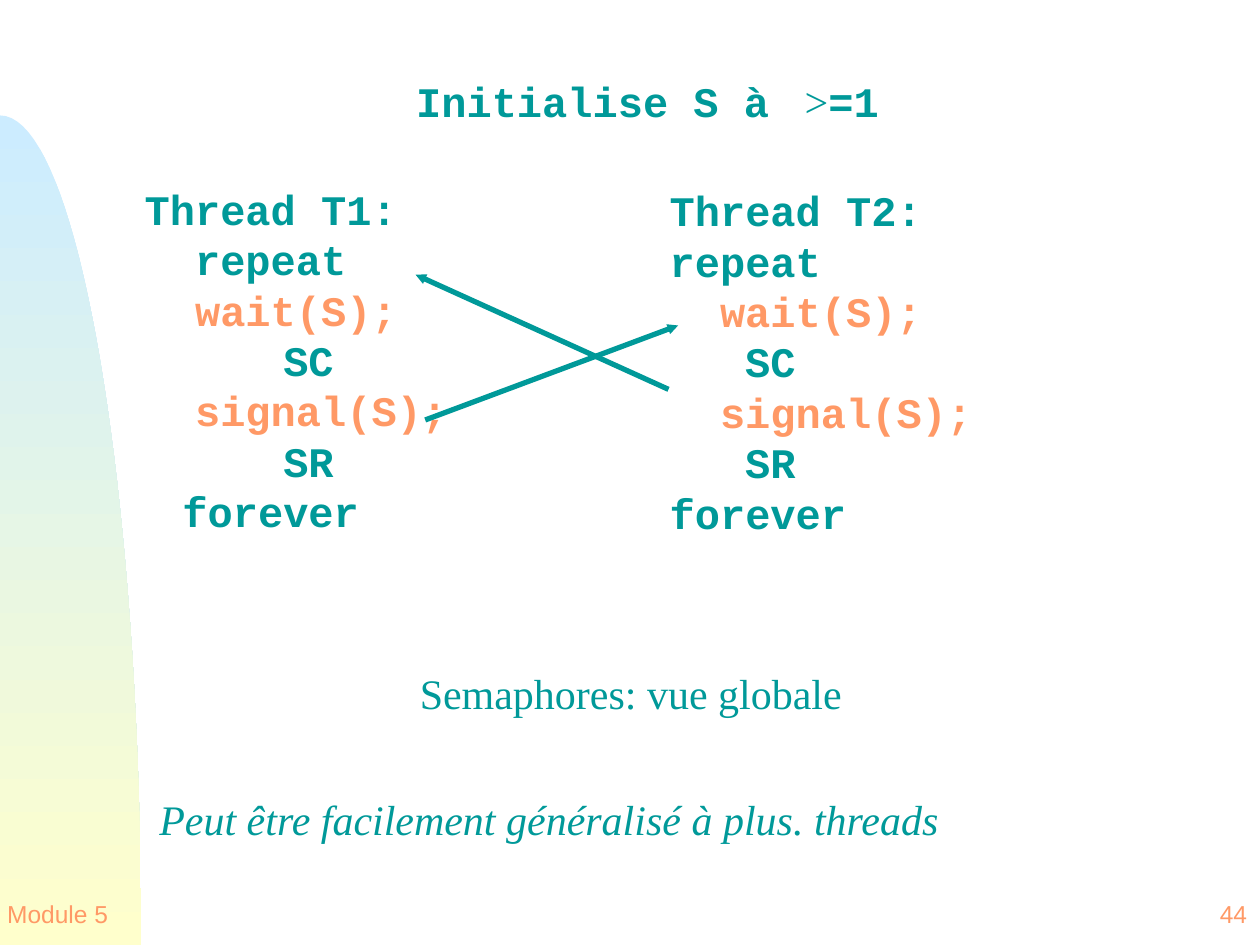
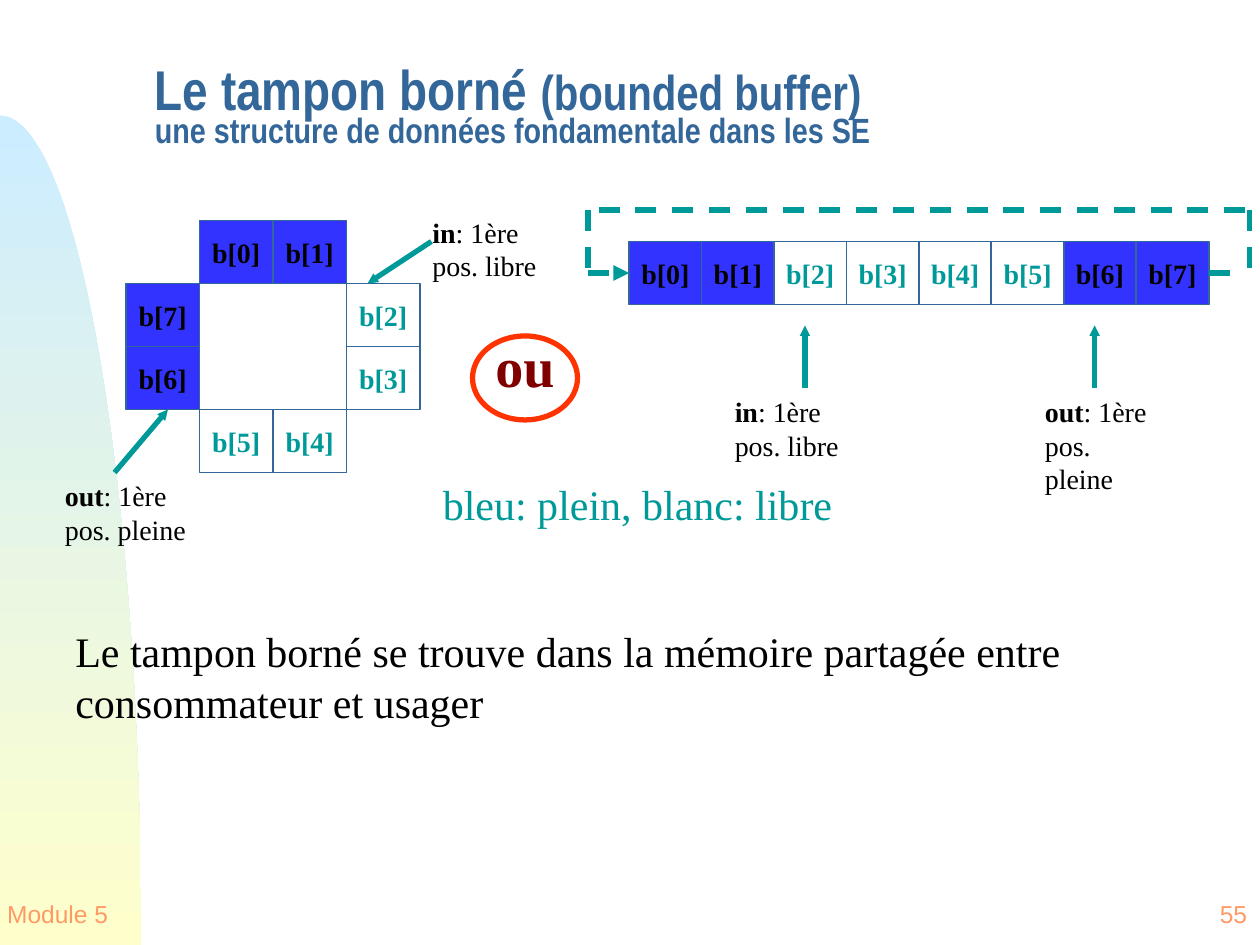
from dataclasses import dataclass
from typing import Optional

from lxml.etree import SubElement
from pptx import Presentation
from pptx.dml.color import RGBColor
from pptx.enum.dml import MSO_LINE
from pptx.enum.shapes import MSO_CONNECTOR, MSO_SHAPE
from pptx.enum.text import MSO_ANCHOR, MSO_AUTO_SIZE, PP_ALIGN
from pptx.oxml.ns import qn
from pptx.util import Pt

WIDTH, HEIGHT = 720, 540
TEAL, ORANGE, BLACK = "009999", "FF9966", "010000"
BLUE, STEEL, MAROON, RED = "3333FF", "336699", "800000", "FF3300"
BAND_TOP, BAND_BOTTOM = "CCECFF", "FFFFCC"
SERIF, SANS, NARROW, MONO = "Times New Roman", "Arial", "Arial Narrow", "Courier New"
CODE_COLUMN = 14.4  # width of one 24 pt Courier character


@dataclass
class Box:
    left: float
    top: float
    width: float
    height: float


@dataclass
class CodeLine:
    text: str
    column: float
    color: str = TEAL


@dataclass
class Arrow:
    start: tuple[float, float]
    end: tuple[float, float]
    head: Optional[str] = "sm"
    dashed: bool = False


@dataclass
class PositionLabel:
    box: Box
    pointer: str
    description: str


def color_of(hex_string: str) -> RGBColor:
    return RGBColor.from_string(hex_string)


def write(paragraph, text: str, *, size: float = 24, color: str = TEAL, font: str = SERIF,
          bold: bool = False, italic: bool = False, align=PP_ALIGN.LEFT) -> None:
    """Append one formatted run to the paragraph."""
    run = paragraph.add_run()
    run.text = text
    run.font.size = Pt(size)
    run.font.name = font
    run.font.bold = bold
    run.font.italic = italic
    run.font.color.rgb = color_of(color)
    paragraph.alignment = align


def place(shape, box: Box) -> None:
    shape.left, shape.top = Pt(box.left), Pt(box.top)
    shape.width, shape.height = Pt(box.width), Pt(box.height)


def set_frame(frame, wrap: bool = True, anchor=MSO_ANCHOR.TOP):
    frame.word_wrap = wrap
    frame.auto_size = MSO_AUTO_SIZE.NONE
    frame.vertical_anchor = anchor
    return frame


def add_text_frame(slide, box: Box, wrap: bool = True, anchor=MSO_ANCHOR.TOP):
    shape = slide.shapes.add_textbox(0, 0, 0, 0)
    place(shape, box)
    return set_frame(shape.text_frame, wrap, anchor)


def add_text(slide, box: Box, text: str, **text_format) -> None:
    write(add_text_frame(slide, box).paragraphs[0], text, **text_format)


def title_frame(slide, box: Box, anchor=MSO_ANCHOR.TOP):
    place(slide.shapes.title, box)
    return set_frame(slide.shapes.title.text_frame, anchor=anchor)


def add_outlined_shape(slide, preset, box: Box, line: str, weight: float,
                       fill: Optional[str] = None):
    shape = slide.shapes.add_shape(preset, 0, 0, 0, 0)
    place(shape, box)
    shape.shadow.inherit = False
    shape.line.color.rgb = color_of(line)
    shape.line.width = Pt(weight)
    if fill:
        shape.fill.solid()
        shape.fill.fore_color.rgb = color_of(fill)
    else:
        shape.fill.background()
    return shape


def add_arrow(slide, arrow: Arrow):
    connector = slide.shapes.add_connector(
        MSO_CONNECTOR.STRAIGHT, *(Pt(value) for value in (*arrow.start, *arrow.end)))
    connector.line.color.rgb = color_of(TEAL)
    connector.line.width = Pt(3)
    if arrow.dashed:
        connector.line.dash_style = MSO_LINE.DASH
    properties = connector.element.spPr
    if arrow.head:
        SubElement(properties.find(qn("a:ln")), qn("a:tailEnd"),
                   type="triangle", w=arrow.head, len=arrow.head)
    SubElement(properties, qn("a:effectLst"))
    return connector


def add_band(slide) -> None:
    """Draw the curved gradient band along the left edge."""
    controls = ((0, 66), (44.64, 66), (80.64, 278.64), (80.64, HEIGHT))
    steps = 40
    curve = []
    for step in range(steps + 1):
        t = step / steps
        weights = ((1 - t) ** 3, 3 * t * (1 - t) ** 2, 3 * t ** 2 * (1 - t), t ** 3)
        curve.append(tuple(Pt(sum(weight * point[axis] for weight, point in
                                  zip(weights, controls))) for axis in (0, 1)))
    builder = slide.shapes.build_freeform(*curve[0])
    builder.add_line_segments(curve[1:] + [(0, Pt(HEIGHT))], close=True)
    band = builder.convert_to_shape()
    band.shadow.inherit = False
    band.line.fill.background()
    band.fill.gradient()
    band.fill.gradient_angle = 270
    for stop, color in zip(band.fill.gradient_stops, (BAND_TOP, BAND_BOTTOM)):
        stop.color.rgb = color_of(color)


def add_footer(slide, number: str) -> None:
    for box, text, align in ((Box(0, 504, 66, 36), "Module 5", PP_ALIGN.CENTER),
                             (Box(669.75, 504, 50, 36), number, PP_ALIGN.RIGHT)):
        frame = add_text_frame(slide, box, wrap=False, anchor=MSO_ANCHOR.MIDDLE)
        write(frame.paragraphs[0], text, size=14, color=ORANGE, font=SANS, align=align)


def add_code(slide, box: Box, lines: list[CodeLine], first_column: float = 0) -> None:
    frame = add_text_frame(slide, box)
    for index, line in enumerate(lines):
        paragraph = frame.add_paragraph() if index else frame.paragraphs[0]
        write(paragraph, line.text, font=MONO, bold=True, color=line.color)
        margin = Pt((first_column + line.column) * CODE_COLUMN)
        paragraph._p.get_or_add_pPr().set("marL", str(margin))


def thread_code(name: str, repeat: float, section: float, forever: float) -> list[CodeLine]:
    """Listing of one thread; the numbers are the columns of its lines."""
    return [CodeLine(f"Thread {name}:", 0), CodeLine("repeat", repeat),
            CodeLine("wait(S);", 2, ORANGE), CodeLine("SC", section),
            CodeLine("signal(S);", 2, ORANGE), CodeLine("SR", section),
            CodeLine("forever", forever)]


def add_cell(slide, index: int, box: Box):
    """Draw buffer position b[index]; full positions are blue."""
    full = index in (0, 1, 6, 7)
    cell = add_outlined_shape(slide, MSO_SHAPE.RECTANGLE, box, STEEL, 1,
                              BLUE if full else None)
    frame = set_frame(cell.text_frame, wrap=False, anchor=MSO_ANCHOR.MIDDLE)
    write(frame.paragraphs[0], f"b[{index}]", size=16, bold=True,
          color=BLACK if full else TEAL, align=PP_ALIGN.CENTER)
    return cell


def add_position_label(slide, label: PositionLabel) -> None:
    paragraph = add_text_frame(slide, label.box).paragraphs[0]
    write(paragraph, label.pointer, size=16, color=BLACK, bold=True)
    write(paragraph, f": 1ère pos. {label.description}", size=16, color=BLACK)


def build_semaphore_slide(slide) -> None:
    title = title_frame(slide, Box(124, 39.25, 492, 36)).paragraphs[0]
    code_format = dict(font=MONO, bold=True, align=PP_ALIGN.CENTER)
    write(title, "Initialise S à ", **code_format)
    write(title, " >", align=PP_ALIGN.CENTER)
    write(title, "=1", **code_format)
    add_code(slide, Box(0, 101.25, 310, 238), thread_code("T1", 2, 5.5, 1.5), first_column=5.25)
    add_code(slide, Box(375.6, 102, 294, 251), thread_code("T2", 0, 3, 0))
    add_arrow(slide, Arrow((243, 240), (387.5, 186)))
    add_arrow(slide, Arrow((382, 222.5), (237.5, 157)))
    add_text(slide, Box(232.5, 378, 256, 36), "Semaphores: vue globale", align=PP_ALIGN.CENTER)
    add_text(slide, Box(84, 450, 546, 36), "Peut être facilement généralisé à plus. threads",
             italic=True)


def build_buffer_slide(slide) -> None:
    frame = title_frame(slide, Box(81.25, 26, 620.5, 75.5), MSO_ANCHOR.MIDDLE)
    heading, subtitle = frame.paragraphs[0], frame.add_paragraph()
    for paragraph, text, size in ((heading, "Le tampon borné ", 32),
                                  (heading, "(bounded buffer)", 28),
                                  (subtitle, "une structure de données fondamentale dans les SE", 20)):
        write(paragraph, text, size=size, color=STEEL, font=NARROW, bold=True)
        paragraph.line_spacing = 0.7

    ring_places = ((1, 0), (2, 0), (3, 1), (3, 2), (2, 3), (1, 3), (0, 2), (0, 1))
    for index, (column, row) in enumerate(ring_places):
        add_cell(slide, index, Box(72 + 42 * column, 126 + 36 * row, 42, 36))
    row_cells = [add_cell(slide, index, Box(359.5 + 41.4 * index, 138, 41.4, 36))
                 for index in range(8)]

    for arrow in (Arrow((65.5, 270), (96, 234)), Arrow((246.5, 138), (210, 162)),
                  Arrow((460, 222), (460, 186)), Arrow((625.5, 222), (625.5, 186))):
        add_arrow(slide, arrow)

    left, right, top, middle = 336, 714, 120, 156
    for start, end in (((right, top), (right, middle)), ((342, top), (718, top)),
                       ((left, top), (left, middle))):
        add_arrow(slide, Arrow(start, end, head=None, dashed=True))
    leaving = add_arrow(slide, Arrow((690.7, middle), (708, middle), head=None, dashed=True))
    leaving.begin_connect(row_cells[-1], 3)
    entering = add_arrow(slide, Arrow((left, middle), (359.5, middle), "med", dashed=True))
    entering.end_connect(row_cells[0], 1)

    for label in (PositionLabel(Box(30, 270, 96, 46), "out", "pleine"),
                  PositionLabel(Box(240, 119.5, 90, 46), "in", "libre"),
                  PositionLabel(Box(412.8, 222, 88.5, 132), "in", "libre"),
                  PositionLabel(Box(590, 222, 82.5, 65), "out", "pleine")):
        add_position_label(slide, label)

    add_text(slide, Box(276, 186, 66, 45), "ou", size=32, color=MAROON, bold=True)
    add_outlined_shape(slide, MSO_SHAPE.OVAL, Box(270, 192, 60, 48), RED, 3)
    add_text(slide, Box(246, 270, 252, 36), "bleu: plein, blanc: libre")
    add_text(slide, Box(36, 354, 642, 65), "Le tampon borné se trouve dans la mémoire "
             "partagée entre consommateur et usager", color=BLACK)


def main() -> None:
    presentation = Presentation()
    presentation.slide_width, presentation.slide_height = Pt(WIDTH), Pt(HEIGHT)
    title_only = presentation.slide_layouts[5]
    for number, build in (("44", build_semaphore_slide), ("55", build_buffer_slide)):
        slide = presentation.slides.add_slide(title_only)
        add_band(slide)
        add_footer(slide, number)
        build(slide)
    presentation.save("out.pptx")


if __name__ == "__main__":
    main()
